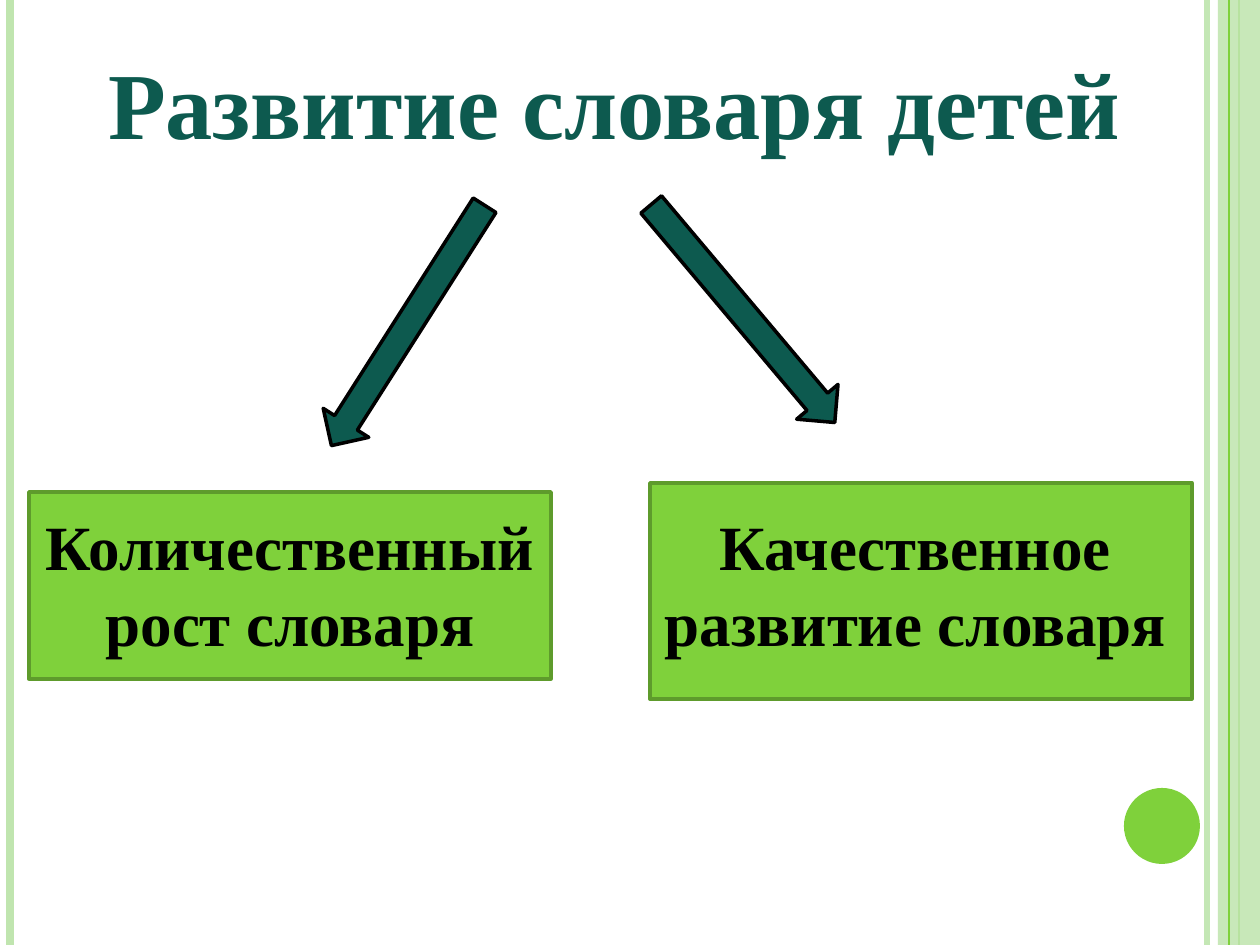
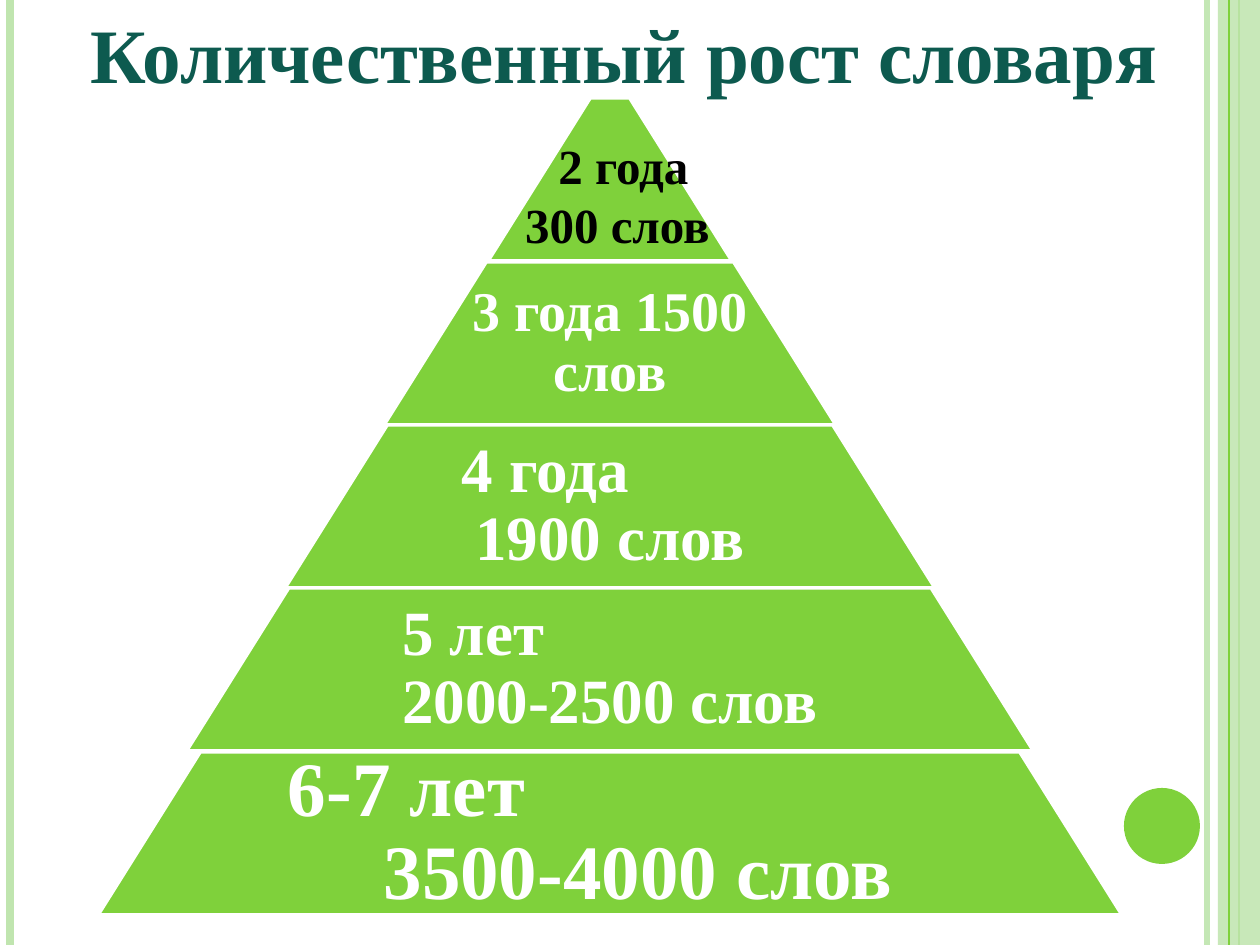
from lxml import etree
from pptx import Presentation
from pptx.dml.color import RGBColor
from pptx.enum.shapes import MSO_CONNECTOR, MSO_SHAPE
from pptx.enum.text import MSO_ANCHOR, MSO_AUTO_SIZE, PP_ALIGN
from pptx.oxml.ns import qn
from pptx.util import Pt

PX = 914400 / 126
FONT = "Times New Roman"
GREEN, PALE, DARK = "7FD13B", "C0E5AF", "0D5A4F"
BLACK, WHITE = "000000", "FFFFFF"
color = RGBColor.from_string


def draw(page, kind, place, fill, line=None):
    shape = page.shapes.add_shape(kind, *[round(n * PX) for n in place])
    shape.shadow.inherit = False
    shape.fill.solid()
    shape.fill.fore_color.rgb = color(fill)
    if line:
        shape.line.color.rgb = color(line)
        shape.line.width = Pt(2)
    else:
        shape.line.fill.background()
    return shape


def write(frame, lines, size, ink, spacing=1.0):
    for number, (text, align, indent) in enumerate(lines):
        para = frame.paragraphs[0] if number == 0 else frame.add_paragraph()
        para.text = text
        para.alignment = align
        para.line_spacing = spacing
        para._p.get_or_add_pPr().set("marL", str(round(indent * PX)))
        para.font.name = FONT
        para.font.size = Pt(size)
        para.font.bold = True
        para.font.color.rgb = color(ink)


deck = Presentation()
deck.slide_width = round(1260 * PX)
deck.slide_height = round(945 * PX)

titles = [
    ("Развитие словаря детей", 54, (88, 39, 1053, 127)),
    ("Количественный рост словаря", 44, (59, 0, 1131, 106)),
]
stripes = [(1207, "C4E7B5", 3), (10, PALE, 4.5), (1239, GREEN, 1.5), (1229, GREEN, 0.75)]
pages = []
for text, size, place in titles:
    page = deck.slides.add_slide(deck.slide_layouts[5])
    pages.append(page)
    title = page.shapes.title
    title.left, title.top, title.width, title.height = [round(n * PX) for n in place]
    title.text_frame.auto_size = MSO_AUTO_SIZE.NONE
    title.text_frame.vertical_anchor = MSO_ANCHOR.TOP
    write(title.text_frame, [(text, PP_ALIGN.CENTER, 0)], size, DARK)

    for x, ink, width in stripes:
        stripe = page.shapes.add_connector(
            MSO_CONNECTOR.STRAIGHT, round(x * PX), 0, round(x * PX), deck.slide_height)
        stripe.line.color.rgb = color(ink)
        stripe.line.width = Pt(width)
        etree.SubElement(stripe._element.spPr, qn("a:effectLst"))
        if x == 1239:
            band = draw(page, MSO_SHAPE.RECTANGLE, (1218, 0, 42, 945), PALE)
            tint = band._element.spPr.find(".//" + qn("a:srgbClr"))
            etree.SubElement(tint, qn("a:alpha"), val="87000")
    draw(page, MSO_SHAPE.OVAL, (1124, 788, 76, 76), GREEN)

overview, growth = pages

for left, top, angle in [(381, 183, 32.5), (716, 171, 319.9)]:
    arrow = draw(overview, MSO_SHAPE.DOWN_ARROW, (left, top, 54, 285), DARK, BLACK)
    arrow.rotation = angle

branches = [
    ("Количественный рост словаря", (29, 492, 522, 187), 12),
    ("Качественное развитие словаря", (650, 483, 542, 216), 23),
]
for text, place, right_margin in branches:
    box = draw(overview, MSO_SHAPE.RECTANGLE, place, GREEN, "5E9B2C")
    frame = box.text_frame
    frame.word_wrap = True
    frame.vertical_anchor = MSO_ANCHOR.TOP
    frame.margin_top = round((508 - place[1]) * PX)
    frame.margin_left = round(12 * PX)
    frame.margin_right = round(right_margin * PX)
    write(frame, [(text, PP_ALIGN.CENTER, 0)], 36, BLACK)

center, tier_height = 610, 163
tiers = [
    (244, 28, 0, []),
    (452, 32, 5, [("3 года 1500 слов", PP_ALIGN.CENTER, 0)]),
    (650, 36, 6, [("4 года", PP_ALIGN.LEFT, 57), ("1900 слов", PP_ALIGN.CENTER, 0)]),
    (847, 36, 6, [("5 лет", PP_ALIGN.LEFT, 62), ("2000-2500 слов", PP_ALIGN.CENTER, 0)]),
    (1024, 44, 8, [("6-7 лет", PP_ALIGN.LEFT, 3), ("3500-4000 слов", PP_ALIGN.CENTER, 56)]),
]
for level, (width, size, inset, lines) in enumerate(tiers):
    top = round(98 + 163.5 * level)
    tier = draw(growth, MSO_SHAPE.TRAPEZOID,
                (center - width / 2, top, width, tier_height), GREEN, WHITE)
    tier.adjustments[0] = 0.627
    if lines:
        text_width = round(width * 0.65)
        place = (center - text_width / 2, top, text_width, tier_height)
        frame = growth.shapes.add_textbox(*[round(n * PX) for n in place]).text_frame
        frame.word_wrap = True
        frame.vertical_anchor = MSO_ANCHOR.MIDDLE
        frame.margin_left = frame.margin_right = round(inset * PX)
        frame.margin_top = frame.margin_bottom = round(inset * PX)
        write(frame, lines, size, WHITE, 0.9)

peak = growth.shapes.add_textbox(*[round(n * PX) for n in (511, 129, 225, 131)])
peak.text_frame.word_wrap = False
write(peak.text_frame,
      [("2 года", PP_ALIGN.CENTER, 0), ("300 слов ", PP_ALIGN.CENTER, 0)], 28, BLACK)

deck.save("out.pptx")
